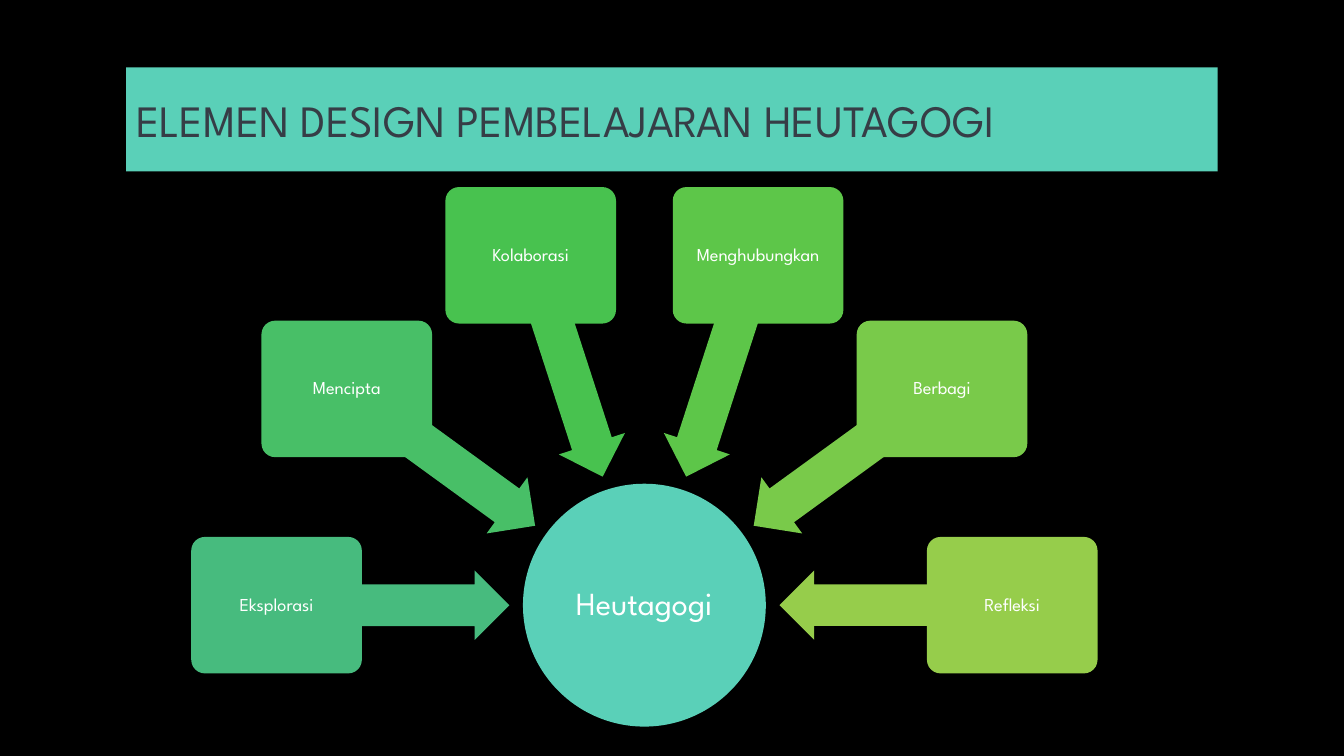
from math import cos, radians, sin

from pptx import Presentation
from pptx.dml.color import RGBColor
from pptx.enum.shapes import MSO_SHAPE
from pptx.enum.text import MSO_ANCHOR, PP_ALIGN
from pptx.util import Cm, Pt

RECTANGLE = MSO_SHAPE.RECTANGLE
ROUNDED = MSO_SHAPE.ROUNDED_RECTANGLE
OVAL = MSO_SHAPE.OVAL
LEFT_ARROW = MSO_SHAPE.LEFT_ARROW
MIDDLE = MSO_ANCHOR.MIDDLE
LEFT, CENTER = PP_ALIGN.LEFT, PP_ALIGN.CENTER

COLORS = {
    "background": "000000",
    "accent": "5AD0B8",
    "title": "363D46",
    "label": "FFFFFF",
    "Eksplorasi": "47BB7E",
    "Mencipta": "48BF67",
    "Kolaborasi": "48C24F",
    "Menghubungkan": "5DC649",
    "Berbagi": "79CA4A",
    "Refleksi": "96CD4B",
}
ELEMENTS = ["Eksplorasi", "Mencipta", "Kolaborasi", "Menghubungkan", "Berbagi", "Refleksi"]
HUB_X, HUB_Y = 16.24, 15.25
CARD_RADIUS, ARROW_RADIUS = 9.27, 6.34


def color(name):
    return RGBColor.from_string(COLORS[name])


def write(box, text, size, ink="label", align=CENTER, inset=0.08, spacing=0.9):
    frame = box.text_frame
    frame.word_wrap = True
    frame.vertical_anchor = MIDDLE
    frame.margin_left = frame.margin_right = Cm(inset)
    frame.margin_top = frame.margin_bottom = Cm(0.08)
    para = frame.paragraphs[0]
    para.alignment = align
    para.line_spacing = spacing
    span = para.add_run()
    span.text = text
    span.font.name = "League Spartan"
    span.font.size = Pt(size)
    span.font.color.rgb = color(ink)


class RadialSlide:
    """Draw a title and a hub ringed by cards whose arrows point inward."""

    def __init__(self, deck):
        self.page = deck.slides.add_slide(deck.slide_layouts[6])
        self.page.background.fill.solid()
        self.page.background.fill.fore_color.rgb = color("background")

    def shape(self, kind, left, top, width, height, fill):
        box = self.page.shapes.add_shape(kind, Cm(left), Cm(top), Cm(width), Cm(height))
        box.shadow.inherit = False
        box.fill.solid()
        box.fill.fore_color.rgb = color(fill)
        box.line.fill.background()
        return box

    def centered(self, kind, x, y, width, height, fill):
        return self.shape(kind, x - width / 2, y - height / 2, width, height, fill)

    def title(self, text):
        banner = self.shape(RECTANGLE, 3.18, 1.7, 27.51, 2.62, "accent")
        write(banner, text, 32, "title", LEFT, inset=0.25, spacing=1.0)

    def hub(self, text):
        circle = self.centered(OVAL, HUB_X, HUB_Y, 6.12, 6.12, "accent")
        write(circle, text, 23)

    def arrow(self, angle, fill):
        x = HUB_X + ARROW_RADIUS * cos(radians(angle))
        y = HUB_Y + ARROW_RADIUS * sin(radians(angle))
        arrow = self.centered(LEFT_ARROW, x, y, 5.87, 1.75, fill)
        arrow.adjustments[0] = 0.6
        arrow.adjustments[1] = 0.5
        arrow.rotation = angle

    def card(self, angle, text):
        x = HUB_X + CARD_RADIUS * cos(radians(angle))
        y = HUB_Y + CARD_RADIUS * sin(radians(angle))
        card = self.centered(ROUNDED, x, y, 4.3, 3.44, text)
        card.adjustments[0] = 0.1
        write(card, text, 13)


def main():
    deck = Presentation()
    deck.slide_width, deck.slide_height = Cm(33.87), Cm(19.05)
    slide = RadialSlide(deck)
    slide.title("ELEMEN DESIGN PEMBELAJARAN HEUTAGOGI")
    slide.hub("Heutagogi")
    step = 180 / (len(ELEMENTS) - 1)
    for index, element in enumerate(ELEMENTS):
        angle = 180 + index * step
        slide.arrow(angle, element)
        slide.card(angle, element)
    deck.save("out.pptx")


if __name__ == "__main__":
    main()
